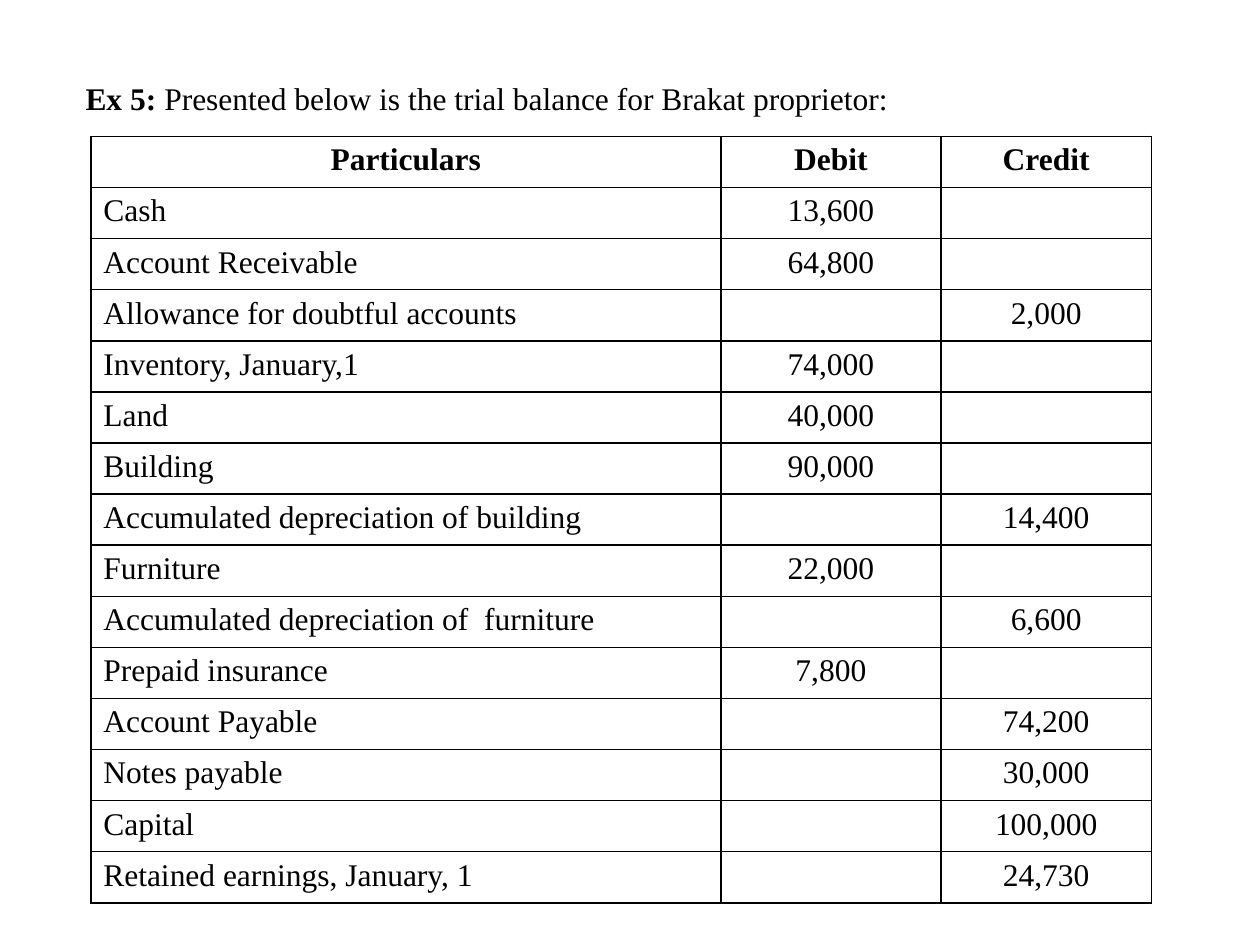
import pptx
import pptx.util
import pptx.dml.color
import pptx.enum.text
import pptx.oxml
from dataclasses import dataclass

Cm = pptx.util.Cm
Align = pptx.enum.text.PP_ALIGN


@dataclass(frozen=True)
class Theme:
    font: str = "Times New Roman"
    size: int = 18
    ink: str = "000000"
    paper: str = "FFFFFF"
    rule: int = 1


THEME = Theme()
HEAD = ("Particulars", "Debit", "Credit")
ROWS = (
    ("Cash", "13,600", ""),
    ("Account Receivable", "64,800", ""),
    ("Allowance for doubtful accounts", "", "2,000"),
    ("Inventory, January,1", "74,000", ""),
    ("Land", "40,000", ""),
    ("Building", "90,000", ""),
    ("Accumulated depreciation of building", "", "14,400"),
    ("Furniture", "22,000", ""),
    ("Accumulated depreciation of  furniture", "", "6,600"),
    ("Prepaid insurance", "7,800", ""),
    ("Account Payable", "", "74,200"),
    ("Notes payable", "", "30,000"),
    ("Capital", "", "100,000"),
    ("Retained earnings, January, 1", "", "24,730"),
)
WIDTHS = (12.7, 4.44, 4.24)
HEIGHT = 1.03


def color(code):
    return pptx.dml.color.RGBColor.from_string(code)


def style(para, align, bold=None):
    para.alignment = align
    font = para.font
    font.name = THEME.font
    font.size = pptx.util.Pt(THEME.size)
    font.color.rgb = color(THEME.ink)
    font.bold = bold


def add_title(slide, label, text):
    title = slide.shapes.title
    title.left, title.top = Cm(1.47), Cm(1.47)
    title.width, title.height = Cm(21.8), Cm(1.8)
    frame = title.text_frame
    frame.word_wrap = True
    frame.auto_size = pptx.enum.text.MSO_AUTO_SIZE.NONE
    frame.vertical_anchor = pptx.enum.text.MSO_ANCHOR.TOP
    para = frame.paragraphs[0]
    style(para, Align.LEFT)
    for part, bold in ((label, True), (text, False)):
        run = para.add_run()
        run.text = part
        run.font.bold = bold


def add_border(cell):
    props = cell._tc.get_or_add_tcPr()
    space = "http://schemas.openxmlformats.org/drawingml/2006/main"
    width = pptx.util.Pt(THEME.rule)
    for side in "LRTB":
        props.append(pptx.oxml.parse_xml(
            f'<a:ln{side} xmlns:a="{space}" w="{width}"><a:solidFill>'
            f'<a:srgbClr val="{THEME.ink}"/></a:solidFill></a:ln{side}>'))


def fill_cell(cell, text, align, bold):
    cell.text = text
    style(cell.text_frame.paragraphs[0], align, bold)
    add_border(cell)
    cell.fill.solid()
    cell.fill.fore_color.rgb = color(THEME.paper)


def add_table(slide, head, rows):
    lines = (head, *rows)
    table = slide.shapes.add_table(
        len(lines), len(head), Cm(1.83), Cm(2.75),
        Cm(sum(WIDTHS)), Cm(HEIGHT * len(lines))).table
    table.first_row = True
    table.horz_banding = False
    for col, width in zip(table.columns, WIDTHS):
        col.width = Cm(width)
    for r, line in enumerate(lines):
        table.rows[r].height = Cm(HEIGHT)
        for c, text in enumerate(line):
            align = Align.LEFT if r and not c else Align.CENTER
            fill_cell(table.cell(r, c), text, align, r == 0)


def main():
    deck = pptx.Presentation()
    deck.slide_width, deck.slide_height = Cm(25.4), Cm(19.05)
    slide = deck.slides.add_slide(deck.slide_layouts[5])
    add_title(slide, "Ex 5: ",
              "Presented below is the trial balance for Brakat proprietor:")
    add_table(slide, HEAD, ROWS)
    deck.save("out.pptx")


if __name__ == "__main__":
    main()
